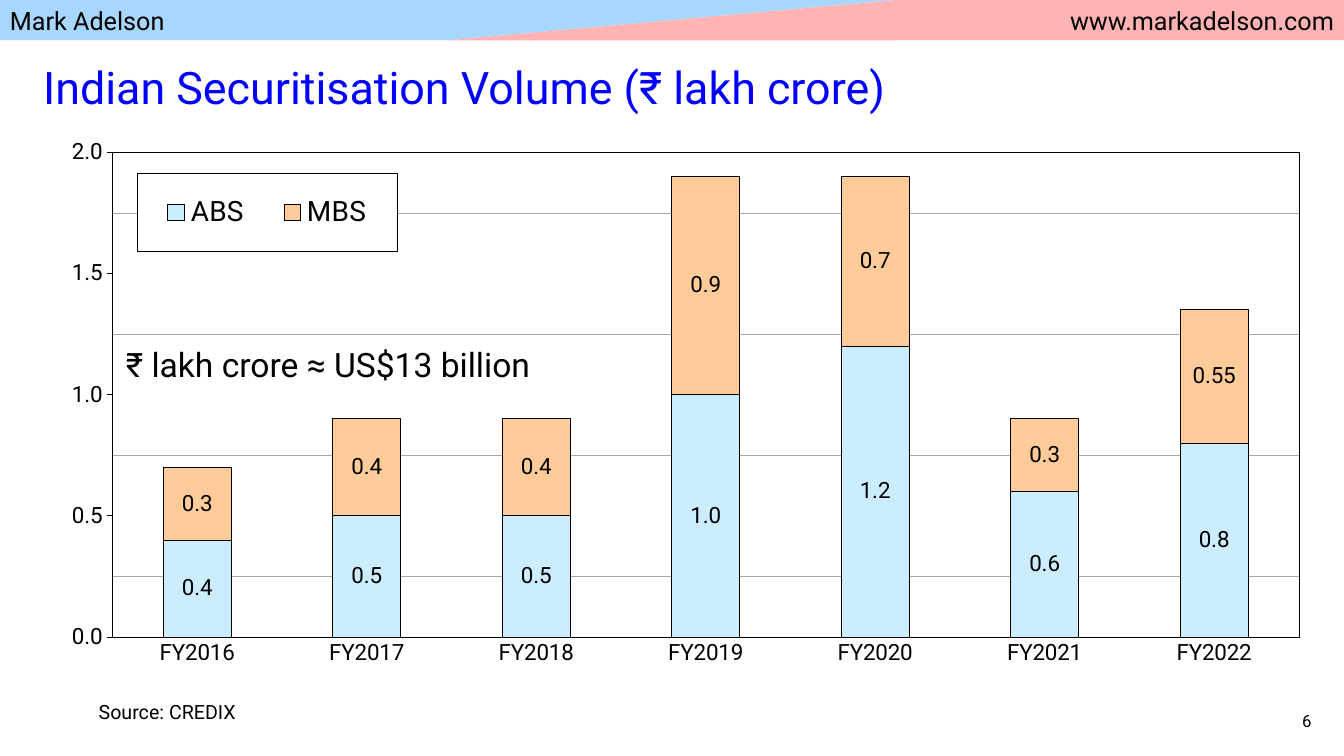
from lxml import etree
from pptx import Presentation
from pptx.chart.data import CategoryChartData
from pptx.dml.color import RGBColor
from pptx.enum.chart import XL_CHART_TYPE as ChartType
from pptx.enum.chart import XL_LEGEND_POSITION as LegendSide
from pptx.enum.chart import XL_TICK_MARK as Tick
from pptx.enum.shapes import MSO_SHAPE as Shape
from pptx.enum.text import MSO_ANCHOR as Anchor
from pptx.enum.text import PP_ALIGN as Align
from pptx.oxml import parse_xml
from pptx.oxml.ns import nsdecls, qn
from pptx.util import Pt

FONT = "Roboto"
BLACK, WHITE, GRID_GREY = "000000", "FFFFFF", "A6A6A6"
HEADER_BLUE, HEADER_PINK, TITLE_BLUE = "A7D6FF", "FFB3B3", "0000FF"
SLIDE_WIDTH, SLIDE_HEIGHT = 960, 540
HEADER_PART, HEADER_HEIGHT = SLIDE_WIDTH / 3, 28.8

YEARS = [f"FY{year}" for year in range(2016, 2023)]
# name, values, fill, label number format
SERIES = [
    ("ABS", (0.4, 0.5, 0.5, 1.0, 1.2, 0.6, 0.8), "CCECFF", "#,##0.0"),
    ("MBS", (0.3, 0.4, 0.4, 0.9, 0.7, 0.3, 0.55), "FFCC99", "General"),
]


def color(value):
    return RGBColor.from_string(value)


def set_values(target, values):
    for name, value in values.items():
        setattr(target, name, value)


def set_font(font, size, hue=BLACK):
    set_values(font, {"name": FONT, "size": Pt(size)})
    font.color.rgb = color(hue)


def set_line(line):
    line.width = Pt(0.5)
    line.color.rgb = color(BLACK)


def write(shape, text, size, hue=BLACK, align=Align.LEFT, anchor=Anchor.MIDDLE):
    frame = shape.text_frame
    set_values(frame, {"word_wrap": True, "vertical_anchor": anchor})
    para = frame.paragraphs[0]
    para.alignment = align
    span = para.add_run()
    span.text = text
    set_font(span.font, size, hue)


def add_text(slide, bounds, text, size, **style):
    box = slide.shapes.add_textbox(*map(Pt, bounds))
    write(box, text, size, **style)


def add_block(slide, kind, part, hue, flip=None):
    """Fill one third of the header band with a preset shape."""
    block = slide.shapes.add_shape(
        kind, Pt(part * HEADER_PART), 0, Pt(HEADER_PART), Pt(HEADER_HEIGHT))
    block.shadow.inherit = False
    block.fill.solid()
    block.fill.fore_color.rgb = color(hue)
    block.line.fill.background()
    if flip:
        block.adjustments[0] = 0
        block.element.spPr.get_or_add_xfrm().set(flip, "1")
    return block


def add_header(slide):
    author = add_block(slide, Shape.RECTANGLE, 0, HEADER_BLUE)
    write(author, "Mark Adelson", 18)
    site = add_block(slide, Shape.RECTANGLE, 2, HEADER_PINK)
    write(site, "www.markadelson.com", 18, align=Align.RIGHT)
    add_block(slide, Shape.ISOSCELES_TRIANGLE, 1, HEADER_BLUE, "flipV")
    add_block(slide, Shape.ISOSCELES_TRIANGLE, 1, HEADER_PINK, "flipH")


def set_layout(parent, index, bounds, inner=False):
    """Place a chart part by fractions of the chart's size."""
    for old in parent.findall(qn("c:layout")):
        parent.remove(old)
    layout = parse_xml(f"<c:layout {nsdecls('c')}><c:manualLayout/></c:layout>")
    settings = [("layoutTarget", "inner")] if inner else []
    settings += [("xMode", "edge"), ("yMode", "edge"), *zip("xywh", bounds)]
    for name, value in settings:
        etree.SubElement(layout[0], qn(f"c:{name}")).set("val", str(value))
    parent.insert(index, layout)


def solid_fill(hue):
    return f'<a:solidFill><a:srgbClr val="{hue}"/></a:solidFill>'


def line_properties(hue, fill=""):
    """Thin line, and a fill if given, for chart parts without a format."""
    return parse_xml(
        f'<c:spPr {nsdecls("c", "a")}>{fill}'
        f'<a:ln w="{Pt(0.5)}">{solid_fill(hue)}</a:ln></c:spPr>')


def chart_part(chart, tag):
    return next(chart.element.iter(qn(tag)))


def format_series(series, hue, number_format):
    series.format.fill.solid()
    series.format.fill.fore_color.rgb = color(hue)
    set_line(series.format.line)
    labels = series.data_labels
    set_values(labels, {"show_value": True, "number_format": number_format,
                        "number_format_is_linked": False})
    set_font(labels.font, 16)


def format_axes(chart):
    years, volume = chart.category_axis, chart.value_axis
    set_values(years, {"major_tick_mark": Tick.NONE, "minor_tick_mark": Tick.NONE,
                       "has_major_gridlines": False})
    set_values(volume, {
        "minimum_scale": 0, "maximum_scale": 2, "major_unit": 0.5,
        "minor_unit": 0.25, "major_tick_mark": Tick.OUTSIDE,
        "minor_tick_mark": Tick.NONE, "has_major_gridlines": False,
        "has_minor_gridlines": True})
    set_values(volume.tick_labels, {"number_format": "#,##0.0",
                                    "number_format_is_linked": False})
    chart_part(chart, "c:minorGridlines").append(line_properties(GRID_GREY))
    for axis in (years, volume):
        set_line(axis.format.line)
        set_font(axis.tick_labels.font, 16)


def format_legend(chart):
    chart.has_legend = True
    legend = chart.legend
    set_values(legend, {"position": LegendSide.BOTTOM, "include_in_layout": False})
    set_font(legend.font, 20)
    element = chart_part(chart, "c:legend")
    set_layout(element, 1, (0.086, 0.073, 0.202, 0.142))
    frame = line_properties(BLACK, solid_fill(WHITE))
    element.find(qn("c:txPr")).addprevious(frame)


def add_volume_chart(slide):
    data = CategoryChartData()
    data.categories = YEARS
    for name, values, _, _ in SERIES:
        data.add_series(name, values)
    bounds = map(Pt, (18.72, 95.04, 920.16, 393.84))
    chart = slide.shapes.add_chart(ChartType.COLUMN_STACKED, *bounds, data).chart
    chart.has_title = False
    set_font(chart.font, 16)
    plot = chart.plots[0]
    set_values(plot, {"gap_width": 150, "overlap": 100, "vary_by_categories": False})
    for series, (_, _, hue, number_format) in zip(plot.series, SERIES):
        format_series(series, hue, number_format)
    format_axes(chart)
    format_legend(chart)
    area = chart_part(chart, "c:plotArea")
    set_layout(area, 0, (0.067, 0.035, 0.921, 0.879), inner=True)
    area.append(line_properties(BLACK, solid_fill(WHITE)))


def main():
    deck = Presentation()
    set_values(deck, {"slide_width": Pt(SLIDE_WIDTH), "slide_height": Pt(SLIDE_HEIGHT)})
    slide = deck.slides.add_slide(deck.slide_layouts[6])
    add_header(slide)
    add_text(slide, (23.76, 41.76, 920.16, 39.6),
             "Indian Securitisation Volume (₹ lakh crore)", 32, hue=TITLE_BLUE)
    add_volume_chart(slide)
    add_text(slide, (720, 500.4, 223.92, 28.8), "6", 12, align=Align.RIGHT)
    add_text(slide, (63.36, 496.08, 579.6, 24.48), "Source: CREDIX", 14,
             anchor=Anchor.TOP)
    add_text(slide, (82.8, 241.92, 318.24, 36), "₹ lakh crore ≈ US$13 billion", 24,
             anchor=Anchor.TOP)
    deck.save("out.pptx")


if __name__ == "__main__":
    main()
